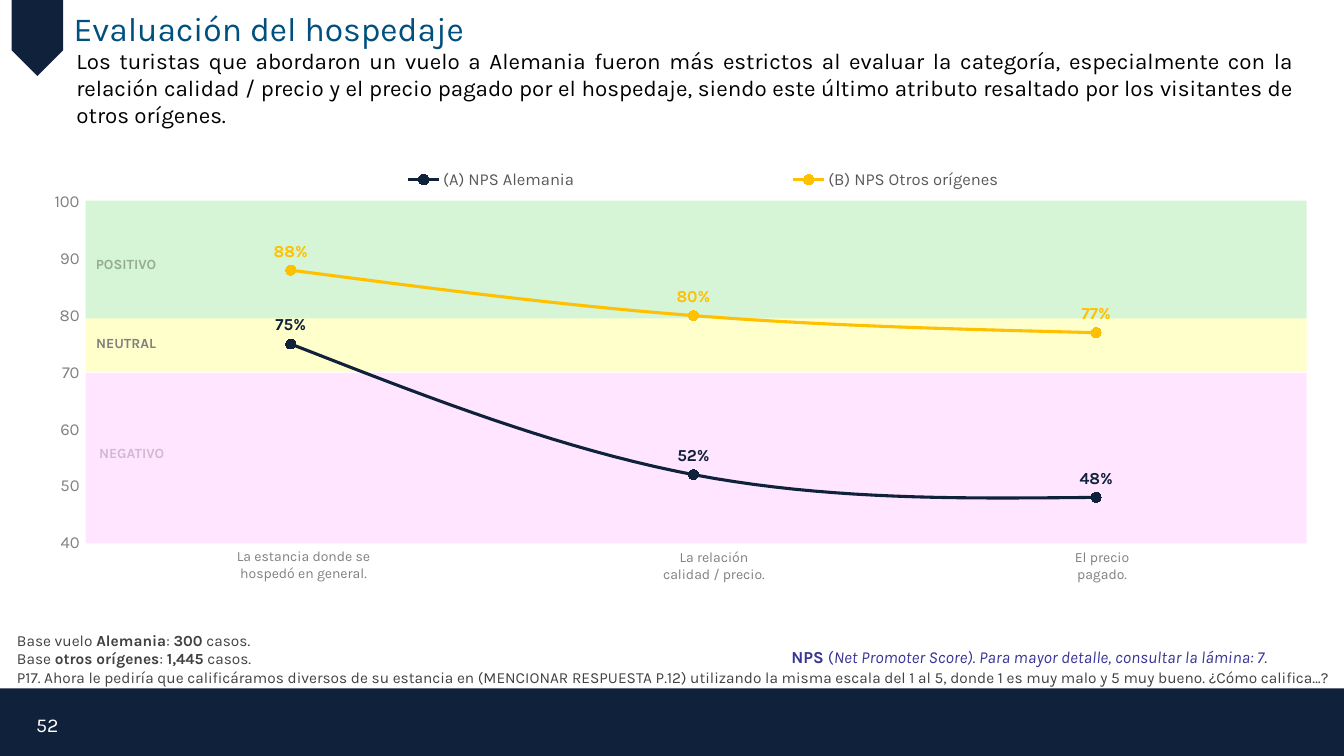
"""Build the lodging evaluation slide with its NPS line chart."""
import pptx
import pptx.chart.data
import pptx.dml.color
import pptx.enum.chart
import pptx.enum.shapes
import pptx.enum.text
import pptx.oxml
import pptx.util
from pptx.util import Inches

FONT = "Karla"
COLORS = {
    "navy": "10213B", "blue": "00507F", "gold": "FFC000", "gray": "808080",
    "legend": "595959", "note": "414141", "purple": "393596", "black": "000000",
    "white": "FFFFFF", "pink": "FFCCFF", "yellow": "FFFF00", "green": "33CC33",
    "negative": "CFBACE", "positive": "96AB95",
}
TITLE = "Evaluación del hospedaje"
SUMMARY = (
    "Los turistas que abordaron un vuelo a Alemania fueron más estrictos al evaluar la "
    "categoría, especialmente con la relación calidad / precio y el precio pagado por el "
    "hospedaje, siendo este último atributo resaltado por los visitantes de otros orígenes."
)
QUESTION = (
    "P17. Ahora le pediría que calificáramos diversos de su estancia en (MENCIONAR RESPUESTA "
    "P.12) utilizando la misma escala del 1 al 5, donde 1 es muy malo y 5 muy bueno. "
    "¿Cómo califica…?"
)
BASES = [
    [("Base vuelo ", ""), ("Alemania", "b"), (": ", ""), ("300", "b"), (" casos.", "")],
    [("Base ", ""), ("otros orígenes", "b"), (": ", ""), ("1,445", "b"), (" casos.", "")],
    [(QUESTION, "")],
]
NPS_NOTE = [[("NPS", "b"), (" (", ""),
             ("Net Promoter Score). Para mayor detalle, consultar la lámina: 7.", "i")]]
SERIES = [("(A) NPS Alemania", (75, 52, 48), "navy"),
          ("(B) NPS Otros orígenes", (88, 80, 77), "gold")]
BANDS = [("pink", 3.7, 1.69, 50), ("yellow", 3.16, 0.53, 20), ("green", 1.99, 1.17, 20)]
BAND_LABELS = [("NEGATIVO", "negative", (0.87, 4.36, 0.87, 0.27)),
               ("POSITIVO", "positive", (0.85, 2.49, 0.8, 0.27)),
               ("NEUTRAL", "gray", (0.83, 3.27, 0.84, 0.28))]
CATEGORY_LABELS = [("La estancia donde se hospedó en general.", (2.22, 5.38, 1.58, 0.44)),
                   ("La relación calidad / precio.", (6.44, 5.39, 1.28, 0.44)),
                   ("El precio pagado.", (10.37, 5.39, 1.12, 0.44))]
PLOT_LAYOUT = (0.035, 0.135, 0.986, 0.837)
LEGEND_LAYOUT = (0.1, 0.04, 0.83, 0.08)

ALIGN = pptx.enum.text.PP_ALIGN
SHAPE = pptx.enum.shapes.MSO_SHAPE


def rgb(name):
    return pptx.dml.color.RGBColor.from_string(COLORS[name])


def style(font, size, color, bold=False):
    font.name, font.size, font.bold = FONT, pptx.util.Pt(size), bold
    font.color.rgb = rgb(color)


def write(box, paragraphs, size, color, align=ALIGN.LEFT, wrap=True):
    frame = box.text_frame
    frame.word_wrap = wrap
    for index, runs in enumerate(paragraphs):
        para = frame.add_paragraph() if index else frame.paragraphs[0]
        para.alignment = align
        for text, weight in runs:
            span = para.add_run()
            span.text = text
            style(span.font, size, color, weight == "b")
            span.font.italic = weight == "i"


def add_text(page, place, paragraphs, size, color, align=ALIGN.LEFT, wrap=True):
    box = page.shapes.add_textbox(*map(Inches, place))
    write(box, paragraphs, size, color, align, wrap)
    return box


def add_block(page, preset, place, color, opacity=100):
    block = page.shapes.add_shape(preset, *map(Inches, place))
    block.shadow.inherit = False
    block.fill.solid()
    block.fill.fore_color.rgb = rgb(color)
    block.line.fill.background()
    if opacity < 100:
        tint = block.fill._xPr.find(".//" + pptx.oxml.ns.qn("a:srgbClr"))
        alpha = pptx.oxml.parse_xml(
            f'<a:alpha {pptx.oxml.ns.nsdecls("a")} val="{opacity * 1000}"/>')
        tint.append(alpha)
    return block


def manual_layout(bounds, target=""):
    sizes = "".join(f'<c:{key} val="{value}"/>' for key, value in zip("xywh", bounds))
    return pptx.oxml.parse_xml(
        f'<c:layout {pptx.oxml.ns.nsdecls("c")}><c:manualLayout>{target}'
        f'<c:xMode val="edge"/><c:yMode val="edge"/>{sizes}</c:manualLayout></c:layout>')


def set_layout(parent, layout, position):
    for old in parent.findall(pptx.oxml.ns.qn("c:layout")):
        parent.remove(old)
    parent.insert(position, layout)


def add_nps_chart(page):
    data = pptx.chart.data.CategoryChartData()
    data.categories = ["1", "2", "3"]
    for name, values, _ in SERIES:
        data.add_series(name, values)
    chart = page.shapes.add_chart(
        pptx.enum.chart.XL_CHART_TYPE.LINE_MARKERS,
        *map(Inches, (0.54, 1.46, 12.33, 4.04)), data).chart
    style(chart.font, 10, "black")
    chart.has_title = False
    chart.has_legend = True
    chart.legend.position = pptx.enum.chart.XL_LEGEND_POSITION.TOP
    chart.legend.include_in_layout = False
    style(chart.legend.font, 12, "legend")
    set_layout(chart.legend._element, manual_layout(LEGEND_LAYOUT), 1)
    plot_area = chart.plots[0]._element.getparent()
    set_layout(plot_area, manual_layout(PLOT_LAYOUT, '<c:layoutTarget val="inner"/>'), 0)

    chart.category_axis.visible = False
    axis = chart.value_axis
    axis.minimum_scale, axis.maximum_scale, axis.major_unit = 40, 100, 10
    axis.has_major_gridlines = False
    axis.format.line.fill.background()
    axis.tick_labels.number_format = "0"
    axis.tick_labels.number_format_is_linked = False
    style(axis.tick_labels.font, 12, "gray")

    chart.plots[0].vary_by_categories = False
    for series, (_, _, color) in zip(chart.plots[0].series, SERIES):
        series.smooth = True
        series.format.line.color.rgb = rgb(color)
        series.format.line.width = pptx.util.Pt(2.25)
        series.marker.style = pptx.enum.chart.XL_MARKER_STYLE.CIRCLE
        series.marker.size = 7
        series.marker.format.fill.solid()
        series.marker.format.fill.fore_color.rgb = rgb(color)
        series.marker.format.line.color.rgb = rgb(color)
        labels = series.data_labels
        labels.show_value = True
        labels.position = pptx.enum.chart.XL_LABEL_POSITION.ABOVE
        labels.number_format = '#"%"'
        labels.number_format_is_linked = False
        style(labels.font, 12, color, True)


def main():
    deck = pptx.Presentation()
    deck.slide_width, deck.slide_height = Inches(13.33), Inches(7.5)
    page = deck.slides.add_slide(deck.slide_layouts[5])

    title = page.shapes.title
    title.left, title.top, title.width, title.height = map(Inches, (0.63, 0.03, 8.35, 0.5))
    title.text_frame.vertical_anchor = pptx.enum.text.MSO_ANCHOR.TOP
    write(title, [[(TITLE, "")]], 24, "blue")

    add_block(page, SHAPE.RECTANGLE, (0, 6.83, 13.33, 0.67), "navy")
    add_block(page, SHAPE.PENTAGON, (-0.01, 0.12, 0.76, 0.51), "navy").rotation = 90
    number = add_text(page, (0.02, 6.97, 0.66, 0.44), [[("52", "")]], 14, "white", ALIGN.RIGHT)
    number.text_frame.vertical_anchor = pptx.enum.text.MSO_ANCHOR.MIDDLE

    add_text(page, (0.07, 6.21, 13.26, 0.66), BASES, 11, "note")
    for text, place in CATEGORY_LABELS:
        add_text(page, place, [[(text, "")]], 10, "gray", ALIGN.CENTER)
    for color, top, height, opacity in BANDS:
        add_block(page, SHAPE.RECTANGLE, (0.85, top, 12.11, height), color, opacity)
    add_nps_chart(page)
    for text, color, place in BAND_LABELS:
        add_text(page, place, [[(text, "b")]], 10, color, ALIGN.CENTER, False)
    add_text(page, (7.75, 6.37, 5.58, 0.3), NPS_NOTE, 12, "purple", wrap=False)
    add_text(page, (0.66, 0.42, 12.27, 0.91), [[(SUMMARY, "")]], 16, "black", ALIGN.JUSTIFY)
    deck.save("out.pptx")


if __name__ == "__main__":
    main()
